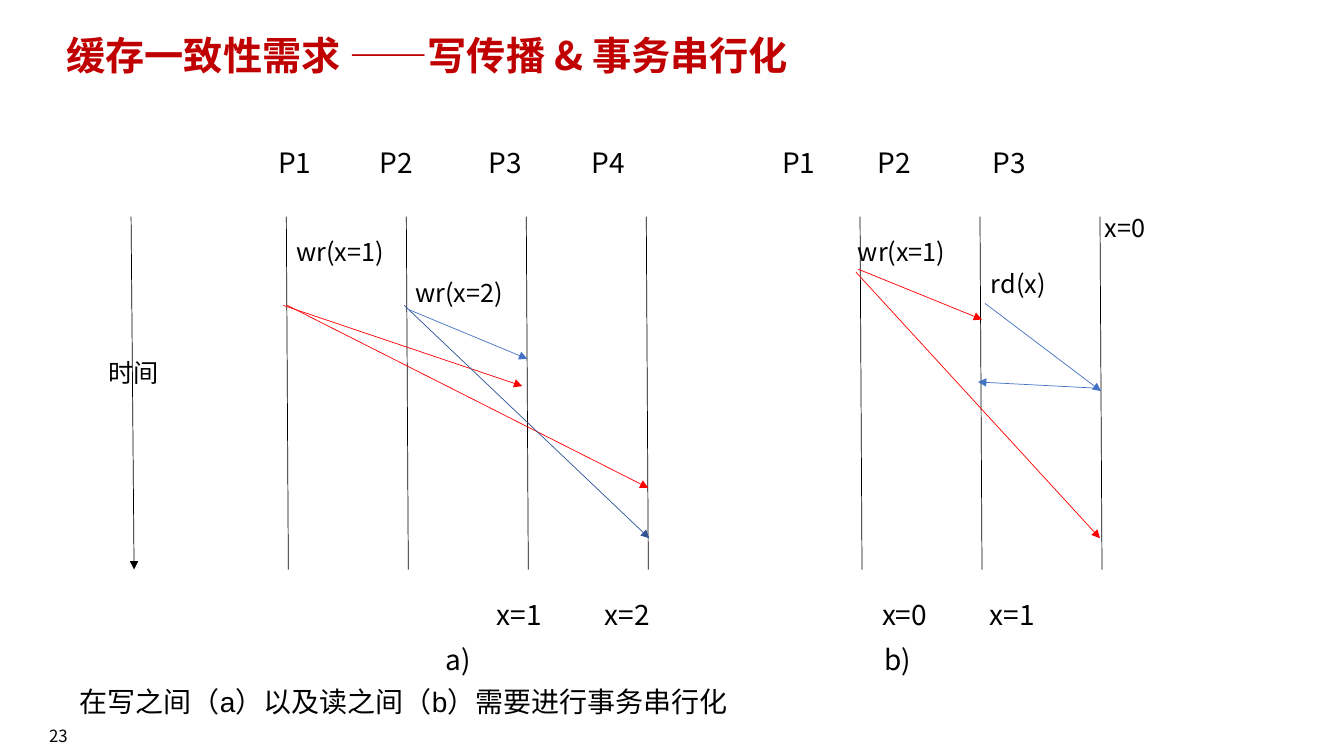
"""Build the cache coherence slide on write propagation and transaction serialization."""
from dataclasses import dataclass

from lxml import etree
from pptx import Presentation
from pptx.dml.color import RGBColor
from pptx.enum.shapes import MSO_CONNECTOR
from pptx.enum.text import MSO_ANCHOR, MSO_AUTO_SIZE, PP_ALIGN
from pptx.oxml.ns import qn
from pptx.slide import Slide
from pptx.text.text import _Paragraph
from pptx.util import Inches, Pt

STRAIGHT = MSO_CONNECTOR.STRAIGHT
TOP, MIDDLE = MSO_ANCHOR.TOP, MSO_ANCHOR.MIDDLE
NO_FIT, GROW = MSO_AUTO_SIZE.NONE, MSO_AUTO_SIZE.SHAPE_TO_FIT_TEXT
LEFT, CENTER = PP_ALIGN.LEFT, PP_ALIGN.CENTER

BLACK = RGBColor(0x00, 0x00, 0x00)
CRIMSON = RGBColor(0xC0, 0x00, 0x00)
RED = RGBColor(0xFF, 0x00, 0x00)
BLUE = RGBColor(0x44, 0x72, 0xC4)
NAVY = RGBColor(0x2F, 0x55, 0x97)

SANS = "Noto Sans CJK SC"
TITLE_LAYOUT = 5
TIME_START, TIME_END = 2.15, 5.65
PROCESS_GAP = 1.19
LEAN = 0.02


@dataclass(frozen=True)
class Label:
    text: str
    left: float
    top: float
    width: float = 1.16
    height: float = 0.4
    size: int = 18
    font: str = SANS


@dataclass(frozen=True)
class Line:
    x1: float
    y1: float
    x2: float
    y2: float
    color: RGBColor = BLACK
    arrow: bool = True


@dataclass(frozen=True)
class Panel:
    first_process: float
    process_count: int


@dataclass(frozen=True)
class Row:
    top: float
    entries: tuple[tuple[str, float], ...]


PANELS = (Panel(2.84, 4), Panel(8.53, 3))

ROWS = (
    Row(1.39, (("P1", 2.66), ("P2", 3.67), ("P3", 4.75), ("P4", 5.77),
               ("P1", 7.66), ("P2", 8.61), ("P3", 9.75))),
    Row(5.88, (("x=1", 4.83), ("x=2", 5.9), ("x=0", 8.65), ("x=1", 9.72))),
    Row(6.33, (("a)", 4.32), ("b)", 8.67))),
)

LABELS = (
    Label("时间", 0.98, 3.5),
    Label("wr(x=1)", 2.84, 2.3),
    Label("wr(x=2)", 4.02, 2.7),
    Label("wr(x=1)", 8.41, 2.3),
    Label("x=0", 10.86, 2.06),
    Label("rd(x)", 9.73, 2.61),
    Label("在写之间（a）以及读之间（b）需要进行事务串行化",
          0.69, 6.74, 9.86, 0.44, 20, "Arial"),
)

TIME_AXIS = Line(1.3, TIME_START, 1.33, TIME_END)

MESSAGES = (
    Line(2.81, 3.03, 5.18, 3.83, RED),
    Line(2.85, 3.03, 6.43, 4.84, RED),
    Line(4.01, 3.03, 6.44, 5.34, NAVY),
    Line(4.05, 3.07, 5.23, 3.56, BLUE),
    Line(8.51, 2.67, 9.74, 3.17, RED),
    Line(8.49, 2.7, 10.91, 5.34, RED),
    Line(9.77, 3.01, 10.92, 3.88, BLUE),
    Line(10.86, 3.85, 9.7, 3.79, BLUE),
)


def style_paragraph(paragraph: _Paragraph, size: int, color: RGBColor = BLACK,
                    font: str = SANS, bold: bool = False) -> None:
    """Set the font of a paragraph for Latin and East Asian text."""
    paragraph.font.size = Pt(size)
    paragraph.font.bold = bold
    paragraph.font.color.rgb = color
    paragraph.font.name = font
    defaults = paragraph._p.pPr.find(qn("a:defRPr"))
    etree.SubElement(defaults, qn("a:ea"), typeface=SANS)


def set_title(slide: Slide) -> None:
    """Place and format the slide title."""
    title = slide.shapes.title
    title.left, title.top = Inches(0.56), Inches(0.31)
    title.width, title.height = Inches(11.5), Inches(0.65)
    frame = title.text_frame
    frame.text = "缓存一致性需求 ——写传播 & 事务串行化"
    frame.vertical_anchor = TOP
    frame.auto_size = NO_FIT
    paragraph = frame.paragraphs[0]
    paragraph.alignment = LEFT
    paragraph.line_spacing = 0.9
    style_paragraph(paragraph, 28, CRIMSON, bold=True)


def add_label(slide: Slide, label: Label) -> None:
    """Add a left-aligned text label."""
    box = slide.shapes.add_textbox(Inches(label.left), Inches(label.top),
                                   Inches(label.width), Inches(label.height))
    frame = box.text_frame
    frame.text = label.text
    frame.word_wrap = True
    frame.auto_size = GROW
    style_paragraph(frame.paragraphs[0], label.size, font=label.font)


def add_page_number(slide: Slide) -> None:
    """Add the centred page number."""
    box = slide.shapes.add_textbox(Inches(0), Inches(7.1), Inches(1.16), Inches(0.4))
    frame = box.text_frame
    frame.text = "23"
    frame.word_wrap = True
    frame.vertical_anchor = MIDDLE
    frame.paragraphs[0].alignment = CENTER
    style_paragraph(frame.paragraphs[0], 12)


def add_line(slide: Slide, line: Line) -> None:
    """Add a thin line, with an arrowhead at its end if wanted."""
    connector = slide.shapes.add_connector(STRAIGHT, Inches(line.x1), Inches(line.y1),
                                           Inches(line.x2), Inches(line.y2))
    connector.line.color.rgb = line.color
    connector.line.width = Pt(0.5)
    properties = connector._element.spPr
    if line.arrow:
        etree.SubElement(properties.find(qn("a:ln")), qn("a:tailEnd"), type="triangle")
    etree.SubElement(properties, qn("a:effectLst"))


def add_lifelines(slide: Slide, panel: Panel) -> None:
    """Add one evenly spaced lifeline for each process of a panel."""
    for process in range(panel.process_count):
        x = panel.first_process + process * PROCESS_GAP
        add_line(slide, Line(x, TIME_START, x + LEAN, TIME_END, arrow=False))


def main() -> None:
    """Build and save the presentation."""
    presentation = Presentation()
    presentation.slide_width, presentation.slide_height = Inches(13.33), Inches(7.5)
    slide = presentation.slides.add_slide(presentation.slide_layouts[TITLE_LAYOUT])
    set_title(slide)
    add_page_number(slide)
    add_line(slide, TIME_AXIS)
    for panel in PANELS:
        add_lifelines(slide, panel)
    for message in MESSAGES:
        add_line(slide, message)
    for row in ROWS:
        for text, left in row.entries:
            add_label(slide, Label(text, left, row.top, 0.9, 0.44, 20))
    for label in LABELS:
        add_label(slide, label)
    presentation.save("out.pptx")


if __name__ == "__main__":
    main()
